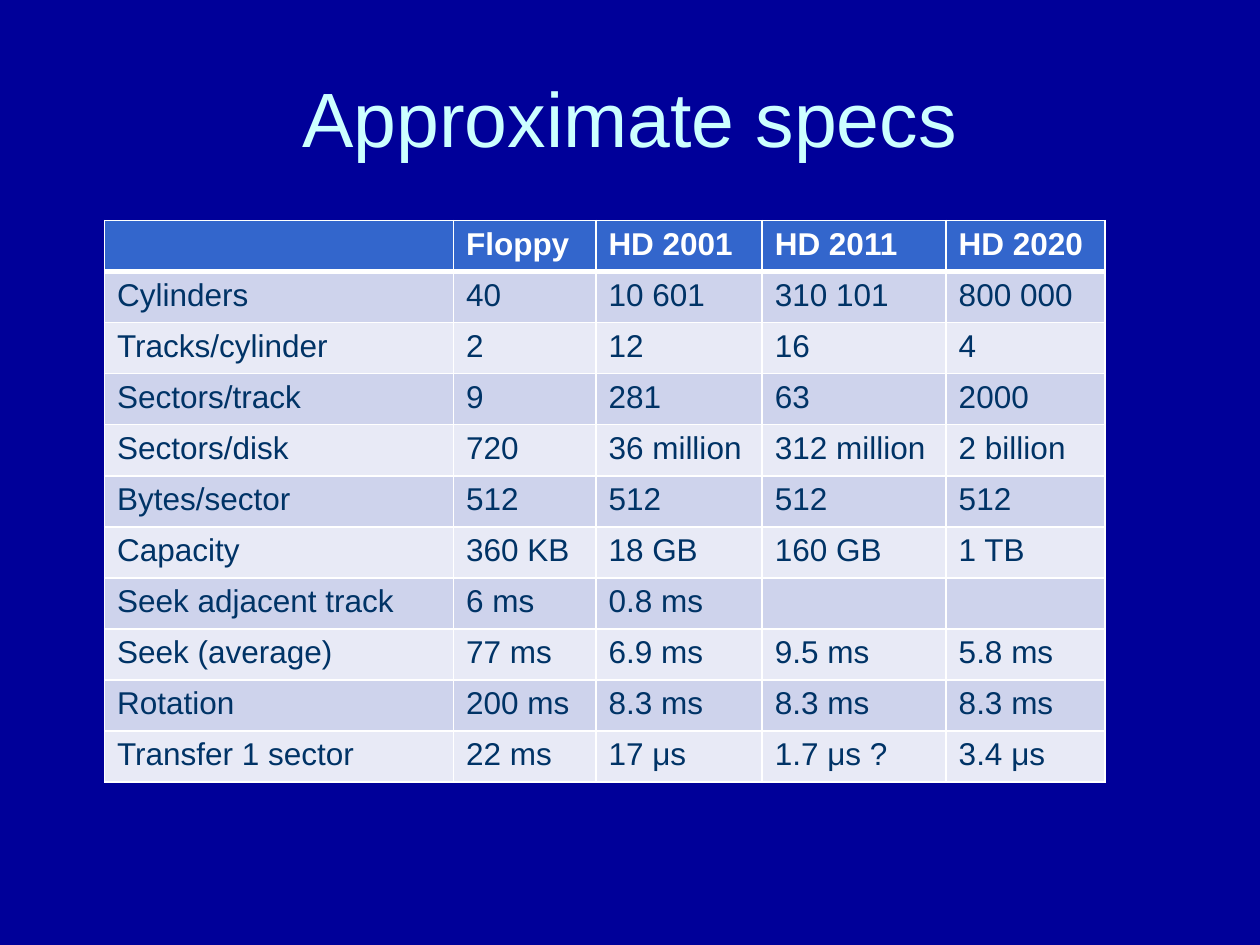
"""Build a slide with a table of approximate disk specs."""
import pptx
import pptx.util
import pptx.dml.color
import pptx.enum.text
import lxml.etree
from pptx.oxml.ns import qn

Inches = pptx.util.Inches
Pt = pptx.util.Pt
RGBColor = pptx.dml.color.RGBColor

NAVY = RGBColor(0x00, 0x00, 0x99)
CYAN = RGBColor(0xCC, 0xFF, 0xFF)
BLUE = RGBColor(0x33, 0x66, 0xCC)
WHITE = RGBColor(0xFF, 0xFF, 0xFF)
INK = RGBColor(0x00, 0x33, 0x66)
DARK = RGBColor(0xCE, 0xD3, 0xEC)
LIGHT = RGBColor(0xE8, 0xEA, 0xF6)

ROWS = [
    ["", "Floppy", "HD 2001", "HD 2011", "HD 2020"],
    ["Cylinders", "40", "10 601", "310 101", "800 000"],
    ["Tracks/cylinder", "2", "12", "16", "4"],
    ["Sectors/track", "9", "281", "63", "2000"],
    ["Sectors/disk", "720", "36 million", "312 million", "2 billion"],
    ["Bytes/sector", "512", "512", "512", "512"],
    ["Capacity", "360 KB", "18 GB", "160 GB", "1 TB"],
    ["Seek adjacent track", "6 ms", "0.8 ms", "", ""],
    ["Seek (average)", "77 ms", "6.9 ms", "9.5 ms", "5.8 ms"],
    ["Rotation", "200 ms", "8.3 ms", "8.3 ms", "8.3 ms"],
    ["Transfer 1 sector", "22 ms", "17 μs", "1.7 μs ?", "3.4 μs"],
]
WIDTHS = [2.77, 1.13, 1.32, 1.46, 1.26]


def add_run(para, text, size, color, bold=False):
    """Add one formatted run to a paragraph."""
    run = para.add_run()
    run.text = text
    run.font.name = "Arial"
    run.font.size = Pt(size)
    run.font.bold = bold
    run.font.color.rgb = color


def add_edge(cell, side, width):
    """Draw one white edge of a cell."""
    props = cell._tc.get_or_add_tcPr()
    line = lxml.etree.SubElement(props, qn("a:" + side), w=str(Pt(width)))
    fill = lxml.etree.SubElement(line, qn("a:solidFill"))
    lxml.etree.SubElement(fill, qn("a:srgbClr"), val=str(WHITE))


deck = pptx.Presentation()
deck.slide_width = Inches(10)
deck.slide_height = Inches(7.5)
slide = deck.slides.add_slide(deck.slide_layouts[5])
slide.background.fill.solid()
slide.background.fill.fore_color.rgb = NAVY

title = slide.shapes.title
title.left, title.top = Inches(0.5), Inches(0.3)
title.width, title.height = Inches(9), Inches(1.25)
title.text_frame.vertical_anchor = pptx.enum.text.MSO_ANCHOR.MIDDLE
head = title.text_frame.paragraphs[0]
head.alignment = pptx.enum.text.PP_ALIGN.CENTER
add_run(head, "Approximate specs", 44, CYAN)

frame = slide.shapes.add_table(
    len(ROWS), len(WIDTHS), Inches(0.83), Inches(1.75), Inches(7.95), Inches(4.46)
)
table = frame.table
for col, width in zip(table.columns, WIDTHS):
    col.width = Inches(width)

for i, row in enumerate(ROWS):
    top = i == 0
    shade = BLUE if top else DARK if i % 2 else LIGHT
    for j, text in enumerate(row):
        cell = table.cell(i, j)
        add_edge(cell, "lnL", 1)
        add_edge(cell, "lnR", 1)
        add_edge(cell, "lnT", 3 if i == 1 else 1)
        add_edge(cell, "lnB", 3 if top else 1)
        cell.fill.solid()
        cell.fill.fore_color.rgb = shade
        if text:
            para = cell.text_frame.paragraphs[0]
            add_run(para, text, 18, WHITE if top else INK, top)

deck.save("out.pptx")
